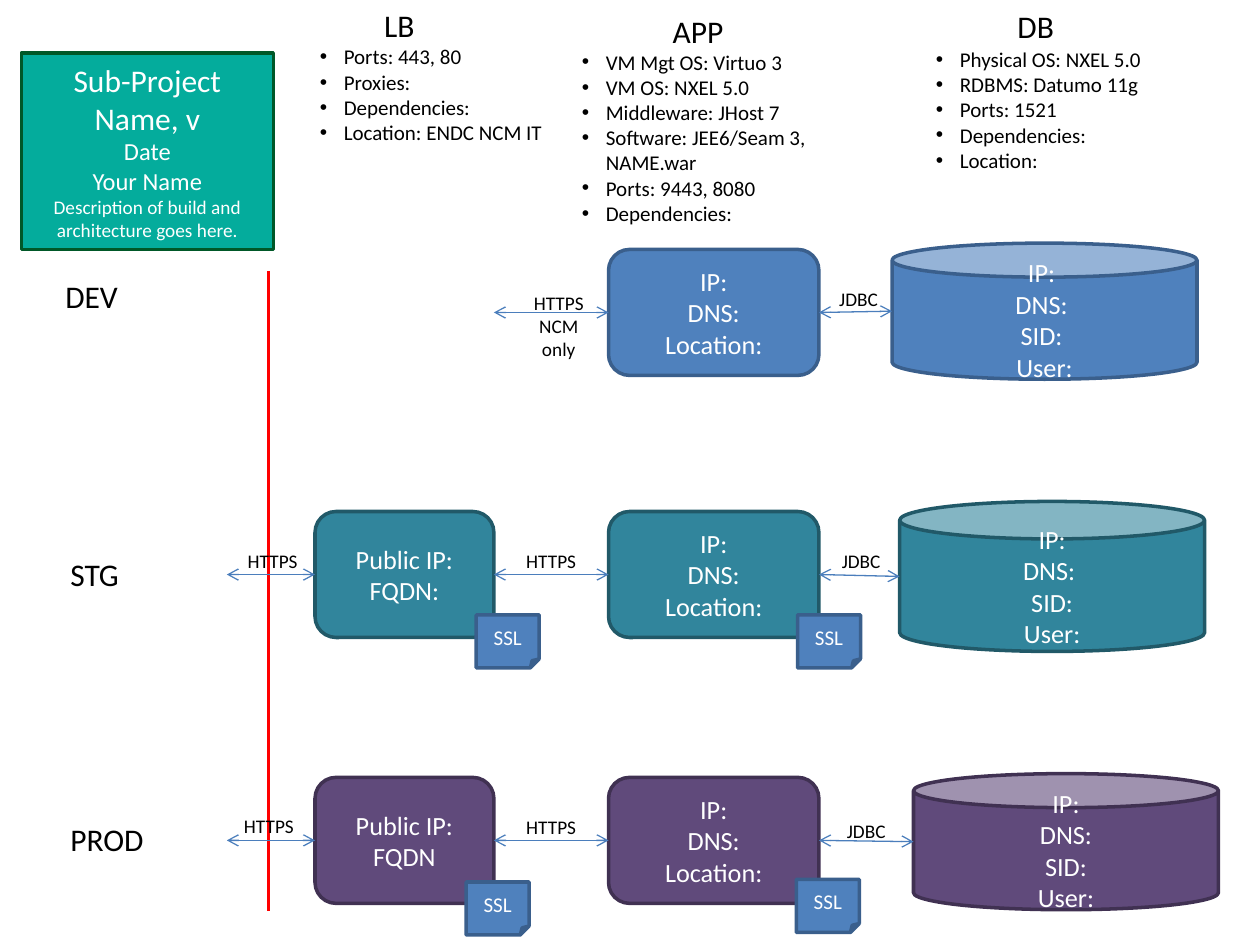
import pptx
import pptx.util
import pptx.dml.color
import pptx.enum.shapes
import pptx.enum.text
import pptx.oxml

EMU_PER_PX = 9144
SHAPES = pptx.enum.shapes.MSO_SHAPE
ALIGN = pptx.enum.text.PP_ALIGN

THEME = {
    "font": "Calibri",
    "text": "000000", "inverse": "FFFFFF",
    "arrow": "4B7EBC", "boundary": "FF0000",
    "title": ("04AC9C", "005828"),
    "DEV": ("4F81BD", "3A5F8C"),
    "STG": ("31859C", "215968"),
    "PROD": ("604A7B", "403152"),
    "heading": 18, "box": 15, "byline": 14, "detail": 12, "small": 11,
    "outline": 2, "boundary_width": 1.5, "arrow_width": 0.75,
}

PROJECT = ["Sub-Project Name, v", "Date", "Your Name",
           "Description of build and architecture goes here."]
PROJECT_SIZES = ["heading", "byline", "byline", "small"]

TIERS = [
    ("LB", (242, 0, 150, 40), (244, 30, 200, 91),
     ["Ports: 443, 80", "Proxies:", "Dependencies:", "Location: ENDC NCM IT"]),
    ("APP", (479, 5, 150, 40), (452, 34, 227, 151),
     ["VM Mgt OS: Virtuo 3", "VM OS: NXEL 5.0", "Middleware: JHost 7",
      "Software: JEE6/Seam 3, NAME.war", "Ports: 9443, 8080", "Dependencies:"]),
    ("DB", (747, 1, 150, 40), (733, 32, 200, 111),
     ["Physical OS: NXEL 5.0", "RDBMS: Datumo 11g", "Ports: 1521",
      "Dependencies:", "Location:"]),
]

APP_LINES = ["IP:", "DNS:", "Location:"]
ENVIRONMENTS = [
    {"name": "DEV", "label": (42, 215), "top": 198, "balancer": None,
     "database": (708, 193, 242, 108), "db_lines": ["IP: ", "DNS: ", "SID: ", "User:"],
     "ssl": [],
     "protocols": [("JDBC", 648, 223), ("HTTPS\nNCM only", 410, 226)]},
    {"name": "STG", "label": (46, 436), "top": 406, "balancer": ["Public IP:", "FQDN:"],
     "database": (714, 398, 242, 119), "db_lines": ["IP:", "DNS: ", "SID:", "User:"],
     "ssl": [(378, 488), (633, 488)],
     "protocols": [("JDBC", 650, 431), ("HTTPS", 404, 431), ("HTTPS", 183, 431)]},
    {"name": "PROD", "label": (46, 646), "top": 617, "balancer": ["Public IP:", "FQDN"],
     "database": (725, 614, 242, 108), "db_lines": ["IP:", "DNS:", "SID:", "User:"],
     "ssl": [(370, 700), (632, 698)],
     "protocols": [("JDBC", 654, 645), ("HTTPS", 404, 642), ("HTTPS", 180, 641)]},
]

CLIENT_X, BALANCER_X, APP_X = 180, 250, 483
BALANCER_W, APP_W, BOX_H = 142, 167, 100
SSL_W, SSL_H = 50, 42
PROTOCOL_W, PROTOCOL_LINE_H = 67, 29
BOUNDARY = (213, 215, 213, 723)
BULLET_INDENT = 19


def emu(*lengths):
    return [round(length * EMU_PER_PX) for length in lengths]


def rgb(color):
    return pptx.dml.color.RGBColor.from_string(color)


def write(frame, lines, sizes, color, align):
    frame.word_wrap = True
    frame.text = "\n".join(lines)
    for paragraph, size in zip(frame.paragraphs, sizes):
        paragraph.alignment = align
        for run in paragraph.runs:
            run.font.name = THEME["font"]
            run.font.size = pptx.util.Pt(THEME[size])
            run.font.color.rgb = rgb(THEME[color])


def add_box(slide, kind, place, colors, lines, sizes):
    box = slide.shapes.add_shape(kind, *emu(*place))
    box.shadow.inherit = False
    fill, outline = THEME[colors]
    box.fill.solid()
    box.fill.fore_color.rgb = rgb(fill)
    box.line.color.rgb = rgb(outline)
    box.line.width = pptx.util.Pt(THEME["outline"])
    box.text_frame.vertical_anchor = pptx.enum.text.MSO_ANCHOR.MIDDLE
    write(box.text_frame, lines, sizes, "inverse", ALIGN.CENTER)


def add_label(slide, place, lines, size, align=ALIGN.CENTER):
    frame = slide.shapes.add_textbox(*emu(*place)).text_frame
    write(frame, lines, [size] * len(lines), "text", align)
    frame.auto_size = pptx.enum.text.MSO_AUTO_SIZE.SHAPE_TO_FIT_TEXT
    return frame


def add_bullets(slide, place, lines):
    frame = add_label(slide, place, lines, "detail", ALIGN.LEFT)
    indent = emu(BULLET_INDENT)[0]
    for paragraph in frame.paragraphs:
        properties = paragraph._p.get_or_add_pPr()
        properties.set("marL", str(indent))
        properties.set("indent", str(-indent))
        for tag, attribute, value in (("a:buFont", "typeface", "Arial"),
                                      ("a:buChar", "char", "•")):
            bullet = pptx.oxml.xmlchemy.OxmlElement(tag)
            bullet.set(attribute, value)
            properties.append(bullet)


def add_line(slide, ends, color, width, arrows=False):
    line = slide.shapes.add_connector(
        pptx.enum.shapes.MSO_CONNECTOR.STRAIGHT, *emu(*ends))
    line.line.color.rgb = rgb(THEME[color])
    line.line.width = pptx.util.Pt(THEME[width])
    if arrows:
        for tag in ("a:headEnd", "a:tailEnd"):
            arrowhead = pptx.oxml.xmlchemy.OxmlElement(tag)
            arrowhead.set("type", "arrow")
            line.line._get_or_add_ln().append(arrowhead)
    line._element.spPr.append(pptx.oxml.xmlchemy.OxmlElement("a:effectLst"))


def add_environment(slide, env):
    name, top, database = env["name"], env["top"], env["database"]
    middle = top + BOX_H / 2
    db_middle = database[1] + database[3] / 2
    balancer_right, app_right = BALANCER_X + BALANCER_W, APP_X + APP_W

    add_label(slide, (*env["label"], 133, 40), [name], "heading", ALIGN.LEFT)
    boxes = [(SHAPES.ROUNDED_RECTANGLE, (APP_X, top, APP_W, BOX_H), APP_LINES),
             (SHAPES.CAN, database, env["db_lines"])]
    arrows = [(app_right, middle, database[0], db_middle),
              (balancer_right, middle, APP_X, middle)]
    if env["balancer"]:
        boxes.append((SHAPES.ROUNDED_RECTANGLE,
                      (BALANCER_X, top, BALANCER_W, BOX_H), env["balancer"]))
        arrows.append((CLIENT_X, middle, BALANCER_X, middle))

    for kind, place, lines in boxes:
        add_box(slide, kind, place, name, lines, ["box"] * len(lines))
    for corner in env["ssl"]:
        add_box(slide, SHAPES.FOLDED_CORNER, (*corner, SSL_W, SSL_H),
                "DEV", ["SSL"], ["detail"])
    for ends in arrows:
        add_line(slide, ends, "arrow", "arrow_width", arrows=True)
    for protocol, left, label_top in env["protocols"]:
        lines = protocol.split("\n")
        add_label(slide, (left, label_top, PROTOCOL_W, PROTOCOL_LINE_H * len(lines)),
                  lines, "small")


def main():
    deck = pptx.Presentation()
    deck.slide_width, deck.slide_height = emu(1000, 750)
    slide = deck.slides.add_slide(deck.slide_layouts[6])

    add_line(slide, BOUNDARY, "boundary", "boundary_width")
    add_box(slide, SHAPES.RECTANGLE, (17, 42, 200, 156), "title", PROJECT, PROJECT_SIZES)
    for tier, heading_place, details_place, details in TIERS:
        add_label(slide, heading_place, [tier], "heading")
        add_bullets(slide, details_place, details)
    for env in ENVIRONMENTS:
        add_environment(slide, env)

    deck.save("out.pptx")


if __name__ == "__main__":
    main()
